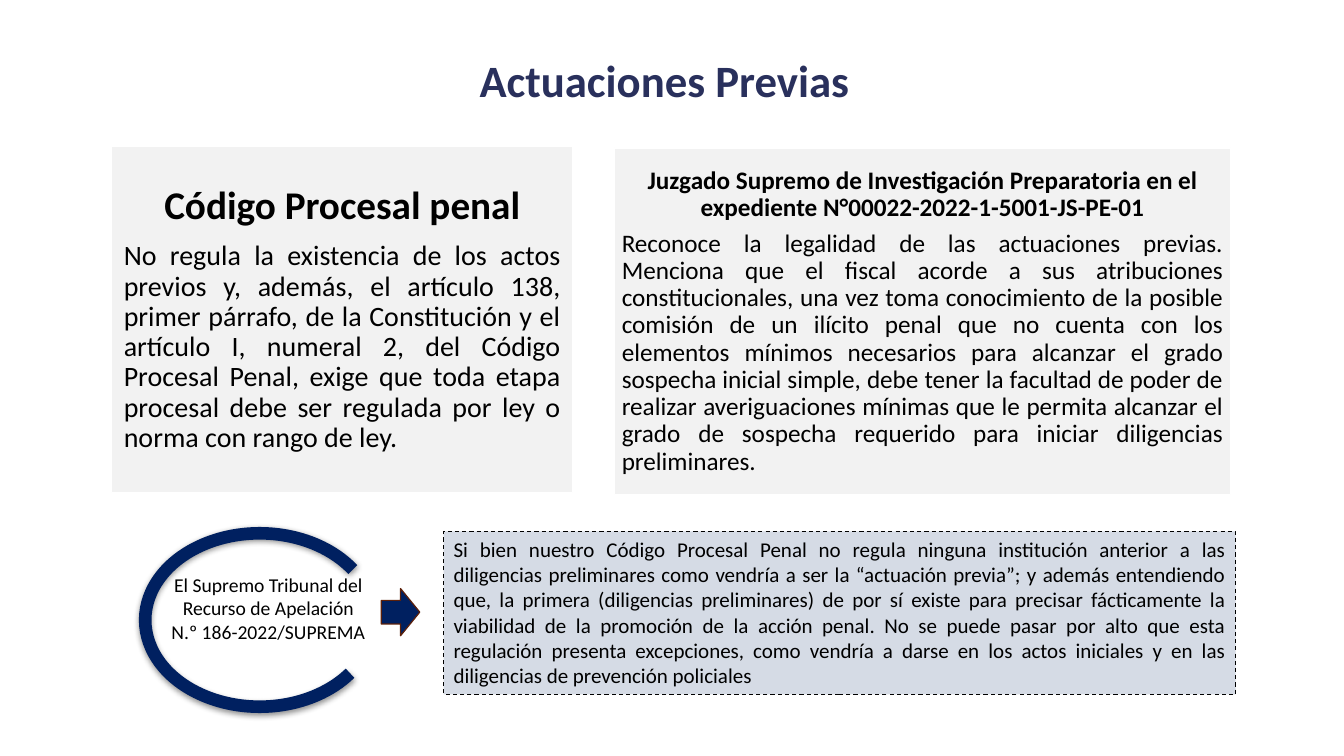
from pptx import Presentation
from pptx.dml.color import RGBColor
from pptx.enum.dml import MSO_LINE
from pptx.enum.shapes import MSO_SHAPE
from pptx.enum.text import MSO_ANCHOR, PP_ALIGN
from pptx.oxml import parse_xml
from pptx.oxml.ns import nsdecls, qn
from pptx.util import Cm, Pt

BLACK = RGBColor(0x00, 0x00, 0x00)
WHITE = RGBColor(0xFF, 0xFF, 0xFF)
PANEL = RGBColor(0xF2, 0xF2, 0xF2)
INDIGO = RGBColor(0x29, 0x30, 0x5C)
NAVY = RGBColor(0x00, 0x20, 0x60)
BROWN = RGBColor(0x5C, 0x20, 0x0A)
PALE_BLUE = RGBColor(0xD5, 0xDB, 0xE5)

CODE_TEXT = (
    "No regula la existencia de los actos previos y, además, el artículo 138, "
    "primer párrafo, de la Constitución y el artículo I, numeral 2, del Código "
    "Procesal Penal, exige que toda etapa procesal debe ser regulada por ley o "
    "norma con rango de ley."
)
COURT_TITLE = (
    "Juzgado Supremo de Investigación Preparatoria en el expediente "
    "N°00022-2022-1-5001-JS-PE-01"
)
COURT_TEXT = (
    "Reconoce la legalidad de las actuaciones previas. Menciona que el fiscal "
    "acorde a sus atribuciones constitucionales, una vez toma conocimiento de la "
    "posible comisión de un ilícito penal que no cuenta con los elementos mínimos "
    "necesarios para alcanzar el grado sospecha inicial simple, debe tener la "
    "facultad de poder de realizar averiguaciones mínimas que le permita alcanzar "
    "el grado de sospecha requerido para iniciar diligencias preliminares."
)
RULING_TEXT = "El Supremo Tribunal del Recurso de Apelación N.º 186-2022/SUPREMA"
CONCLUSION_TEXT = (
    "Si bien nuestro Código Procesal Penal no regula ninguna institución anterior "
    "a las diligencias preliminares como vendría a ser la “actuación previa”; y "
    "además entendiendo que, la primera (diligencias preliminares) de por sí existe "
    "para precisar fácticamente la viabilidad de la promoción de la acción penal. "
    "No se puede pasar por alto que esta regulación presenta excepciones, como "
    "vendría a darse en los actos iniciales y en las diligencias de prevención "
    "policiales"
)


def set_attrs(obj, values):
    for name, value in values.items():
        setattr(obj, name, value)


def add_shape(s, kind, box, fill=None, line=None, width=0.85):
    sp = s.shapes.add_shape(kind, *map(Cm, box))
    sp.shadow.inherit = False
    if fill is None:
        sp.fill.background()
    else:
        sp.fill.solid()
        sp.fill.fore_color.rgb = fill
    if line is None:
        sp.line.fill.background()
    else:
        sp.line.color.rgb = line
        sp.line.width = Pt(width)
    return sp


def setup_frame(sp, side=0.25, edge=0.13, anchor=MSO_ANCHOR.TOP):
    tf = sp.text_frame
    set_attrs(tf, {
        "word_wrap": True,
        "vertical_anchor": anchor,
        "margin_left": Cm(side),
        "margin_right": Cm(side),
        "margin_top": Cm(edge),
        "margin_bottom": Cm(edge),
    })
    return tf


def write(p, text, size, align, color=BLACK, bold=False, **spacing):
    set_attrs(p, {"alignment": align, **spacing})
    r = p.add_run()
    r.text = text
    set_attrs(r.font, {"name": "Calibri", "size": Pt(size), "bold": bold})
    r.font.color.rgb = color


def add_panel(s, box, inset, title, title_size, body, body_size):
    sp = add_shape(s, MSO_SHAPE.RECTANGLE, box, PANEL, WHITE)
    tf = setup_frame(sp, inset, inset, MSO_ANCHOR.MIDDLE)
    write(tf.paragraphs[0], title, title_size, PP_ALIGN.CENTER, bold=True,
          line_spacing=0.9, space_after=Pt(title_size * 0.35))
    write(tf.add_paragraph(), body, body_size, PP_ALIGN.JUSTIFY,
          line_spacing=0.9, space_after=Pt(body_size * 0.35))


def add_title(s, box, text):
    tf = setup_frame(s.shapes.add_textbox(*map(Cm, box)))
    write(tf.paragraphs[0], text, 32, PP_ALIGN.CENTER, INDIGO, True)


def add_note(s, box, text, size, align, fill, line=None):
    sp = add_shape(s, MSO_SHAPE.RECTANGLE, box, fill, line, 0.75)
    if line is not None:
        sp.line.dash_style = MSO_LINE.DASH
    write(setup_frame(sp).paragraphs[0], text, size, align)


def add_open_ring(s, box):
    sp = add_shape(s, MSO_SHAPE.ARC, box, line=NAVY, width=9)
    sp.adjustments[0] = 125.05
    sp.adjustments[1] = 89.71
    spPr = sp._element.spPr
    spPr.find(qn("a:xfrm")).set("flipH", "1")
    spPr.find(qn("a:effectLst")).append(parse_xml(
        f'<a:outerShdw {nsdecls("a")} blurRad="{Pt(4.5)}" dist="{Pt(1.5)}" '
        'dir="5400000" rotWithShape="0"><a:srgbClr val="000000">'
        '<a:alpha val="44000"/></a:srgbClr></a:outerShdw>'))


def add_arrow(s, box):
    sp = add_shape(s, MSO_SHAPE.DOWN_ARROW, box, NAVY, BROWN)
    sp.rotation = 270


def main():
    prs = Presentation()
    set_attrs(prs, {"slide_width": Cm(33.87), "slide_height": Cm(19.05)})
    s = prs.slides.add_slide(prs.slide_layouts[6])
    add_panel(s, (2.82, 3.68, 11.61, 8.74), 0.3,
              "Código Procesal penal", 28, CODE_TEXT, 20)
    add_panel(s, (15.49, 3.73, 15.52, 8.74), 0.18,
              COURT_TITLE, 18, COURT_TEXT, 18)
    add_title(s, (6.17, 1.19, 21.16, 1.63), "Actuaciones Previas")
    add_note(s, (4.01, 14.3, 5.51, 2.06), RULING_TEXT, 14, PP_ALIGN.CENTER, WHITE)
    add_open_ring(s, (3.66, 13.44, 5.77, 4.37))
    add_arrow(s, (9.5, 14.94, 1.19, 0.97))
    add_note(s, (11.18, 13.39, 19.96, 4.11), CONCLUSION_TEXT, 15,
             PP_ALIGN.JUSTIFY, PALE_BLUE, BLACK)
    prs.save("out.pptx")


if __name__ == "__main__":
    main()
